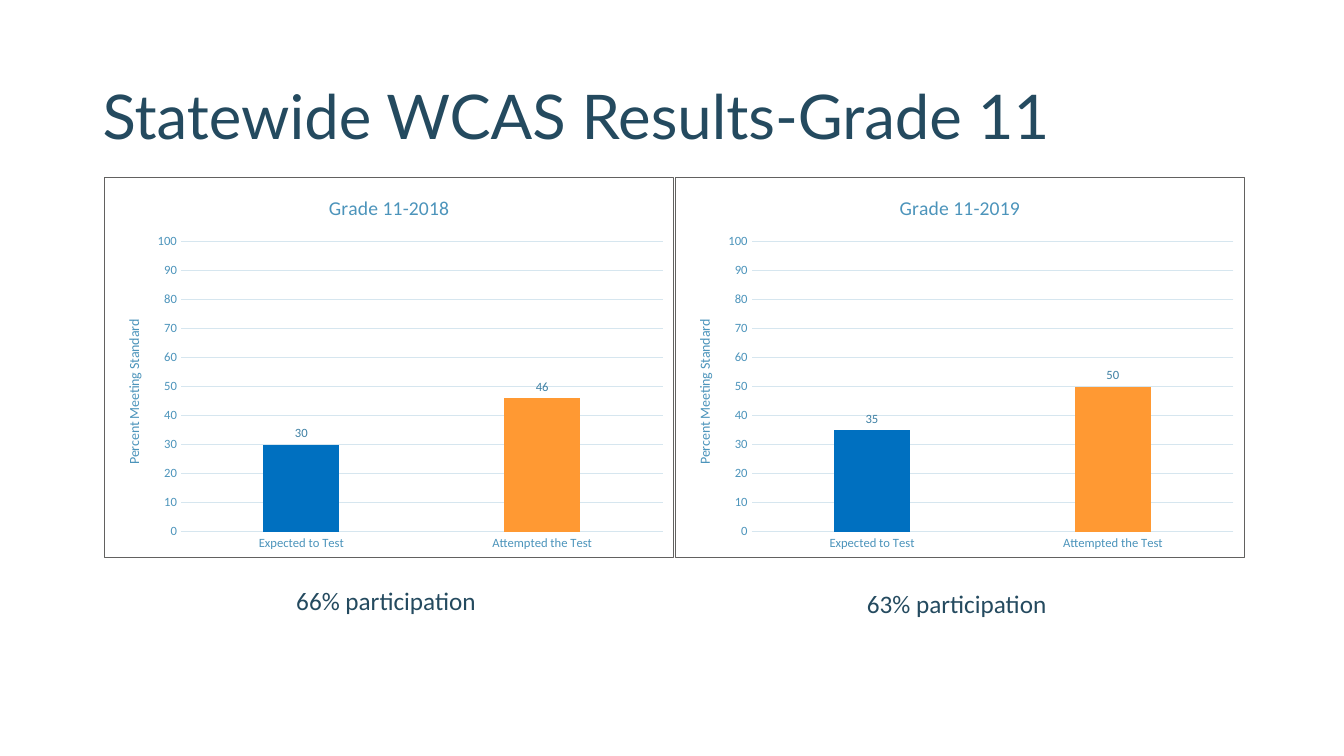
"""Build the Grade 11 statewide results slide with two column charts."""
from lxml.etree import fromstring
from pptx import Presentation
from pptx.chart.data import CategoryChartData
from pptx.dml.color import RGBColor
from pptx.enum.chart import XL_CHART_TYPE, XL_LABEL_POSITION, XL_TICK_MARK
from pptx.enum.text import MSO_ANCHOR
from pptx.oxml.ns import qn
from pptx.util import Inches, Pt

TITLE = "Statewide WCAS Results-Grade 11"
AXIS_TITLE = "Percent Meeting Standard"
CATEGORIES = ["Expected to Test", "Attempted the Test"]
RESULTS = [
    {"title": "Grade 11-2018", "values": (30, 46),
     "note": "66% participation", "note_at": (2.84, 5.76)},
    {"title": "Grade 11-2019", "values": (35, 50),
     "note": "63% participation", "note_at": (8.5, 5.79)},
]
COLORS = {
    "text": "244A5F", "axis": "4C94BB", "label": "3E80A4", "grid": "D6E6EF",
    "border": "626160", "expected": "0070C0", "attempted": "FF9933",
}
CHART_LEFT, CHART_TOP, CHART_WIDTH, CHART_HEIGHT = 1.03, 1.76, 5.66, 3.78
BORDER_XML = (
    '<c:spPr xmlns:c="http://schemas.openxmlformats.org/drawingml/2006/chart" '
    'xmlns:a="http://schemas.openxmlformats.org/drawingml/2006/main">'
    '<a:noFill/><a:ln w="9525"><a:solidFill>'
    f'<a:srgbClr val="{COLORS["border"]}"/></a:solidFill></a:ln></c:spPr>'
)


def color(name):
    """Return a palette colour."""
    return RGBColor.from_string(COLORS[name])


def style_font(font, size, color_name, family="Calibri"):
    """Set size, colour and family of a font."""
    font.size = Pt(size)
    font.name = family
    font.bold = False
    font.color.rgb = color(color_name)


def style_line(line, color_name):
    """Set a thin solid line."""
    line.color.rgb = color(color_name)
    line.width = Pt(0.75)


def add_run(text_frame, text, size, color_name, family="Calibri"):
    """Add one styled run to the first paragraph."""
    paragraph = text_frame.paragraphs[0]
    run = paragraph.add_run()
    run.text = text
    style_font(run.font, size, color_name, family)
    return paragraph


def add_text(slide, box, text, size, family="Calibri"):
    """Add a text box and return its frame and paragraph."""
    text_frame = slide.shapes.add_textbox(*map(Inches, box)).text_frame
    text_frame.word_wrap = True
    return text_frame, add_run(text_frame, text, size, "text", family)


def add_result_chart(slide, left, title, values):
    """Add a bordered column chart for one year."""
    data = CategoryChartData()
    data.categories = CATEGORIES
    data.add_series("Series 1", values)
    box = map(Inches, (left, CHART_TOP, CHART_WIDTH, CHART_HEIGHT))
    chart = slide.shapes.add_chart(XL_CHART_TYPE.COLUMN_CLUSTERED, *box, data).chart
    style_font(chart.font, 10, "text")
    chart.has_legend = False
    chart.has_title = True
    chart.chart_title.include_in_layout = False
    add_run(chart.chart_title.text_frame, title, 14, "axis")
    chart.element.find(qn("c:chart")).addnext(fromstring(BORDER_XML))

    for axis in (chart.category_axis, chart.value_axis):
        axis.major_tick_mark = axis.minor_tick_mark = XL_TICK_MARK.NONE
        style_font(axis.tick_labels.font, 9, "axis")
    style_line(chart.category_axis.format.line, "grid")
    value_axis = chart.value_axis
    value_axis.minimum_scale, value_axis.maximum_scale = 0, 100
    value_axis.major_unit = 10
    value_axis.format.line.fill.background()
    style_line(value_axis.major_gridlines.format.line, "grid")
    add_run(value_axis.axis_title.text_frame, AXIS_TITLE, 10, "axis")

    plot = chart.plots[0]
    plot.vary_by_categories = False
    plot.gap_width, plot.overlap = 219, -27
    series = plot.series[0]
    for index, name in enumerate(("expected", "attempted")):
        fill = series.points[index].format.fill
        fill.solid()
        fill.fore_color.rgb = color(name)
    labels = series.data_labels
    labels.show_value = True
    labels.position = XL_LABEL_POSITION.OUTSIDE_END
    style_font(labels.font, 9, "label")


def main():
    """Build and save the slide."""
    presentation = Presentation()
    presentation.slide_width, presentation.slide_height = Inches(13.33), Inches(7.5)
    slide = presentation.slides.add_slide(presentation.slide_layouts[6])
    text_frame, paragraph = add_text(slide, (0.92, 0.46, 11.5, 1.45), TITLE, 44, "Lato")
    text_frame.vertical_anchor = MSO_ANCHOR.MIDDLE
    paragraph.line_spacing = 0.9
    for index, result in enumerate(RESULTS):
        left = CHART_LEFT + index * CHART_WIDTH
        add_result_chart(slide, left, result["title"], result["values"])
        add_text(slide, (*result["note_at"], 2.03, 0.4), result["note"], 18)
    presentation.save("out.pptx")


if __name__ == "__main__":
    main()
